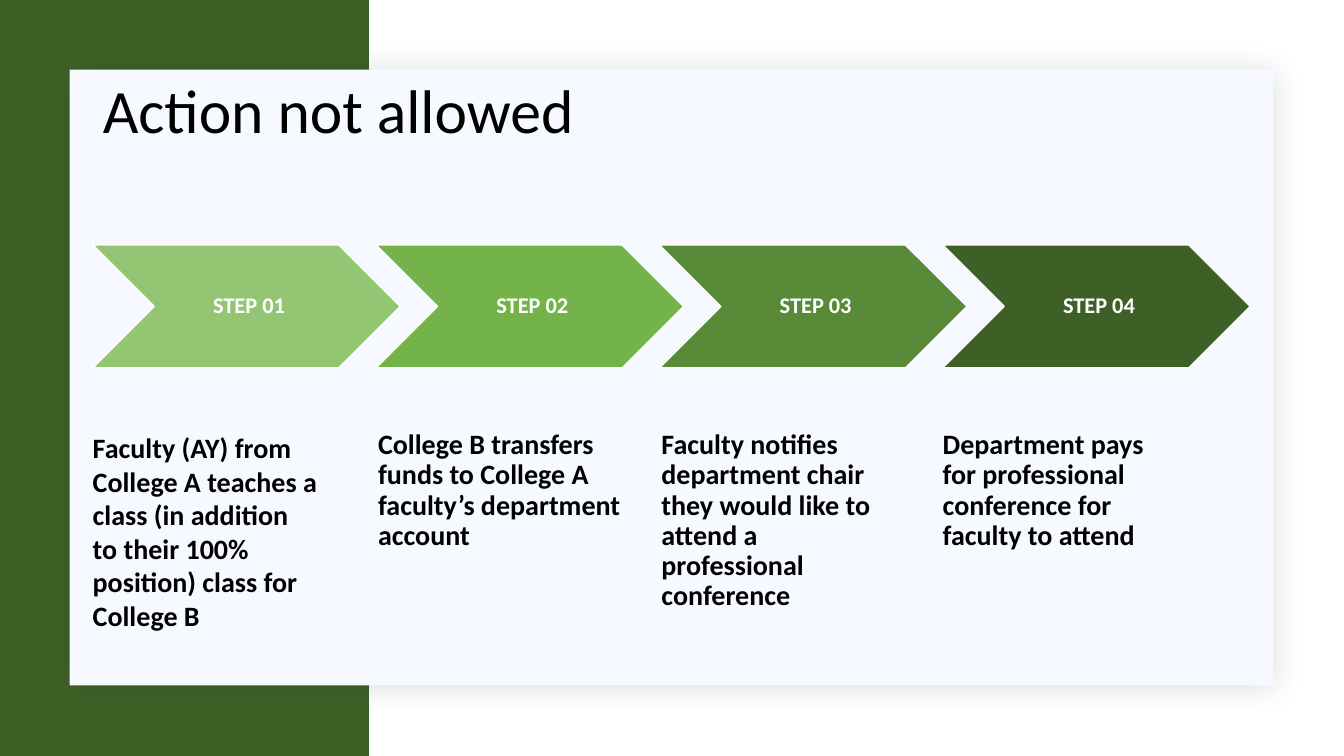
from pptx import Presentation
from pptx.dml.color import RGBColor
from pptx.enum import shapes, text
from pptx.oxml import parse_xml
from pptx.oxml.ns import nsdecls
from pptx.util import Inches, Pt

FONT = "Calibri"
HEADING = "Action not allowed"
STEPS = [
    {"label": "STEP 01", "color": "93C573", "right": 0.2, "spacing": 1.0, "indent": 0,
     "detail": "Faculty (AY) from College A teaches a class (in addition to their 100% position) class for College B"},
    {"label": "STEP 02", "color": "73B34A", "right": 0, "spacing": 0.9, "indent": 0.02,
     "detail": "College B transfers funds to College A faculty’s department account"},
    {"label": "STEP 03", "color": "598A38", "right": 0.2, "spacing": 0.9, "indent": 0.02,
     "detail": "Faculty notifies department chair they would like to attend a professional conference"},
    {"label": "STEP 04", "color": "3E6027", "right": 0.2, "spacing": 0.9, "indent": 0,
     "detail": "Department pays for professional conference for faculty to attend"},
]
LEFT, PITCH = 0.92, 2.81
ARROW_TOP, ARROW_WIDTH, ARROW_HEIGHT = 2.43, 3.05, 1.22
DETAIL_TOP, DETAIL_WIDTH, DETAIL_HEIGHT = 3.8, 2.44, 2.52


def rgb(value):
    return RGBColor.from_string(value)


def add_filled(slide, kind, box, color):
    shape = slide.shapes.add_shape(kind, *map(Inches, box))
    shape.shadow.inherit = False
    shape.fill.solid()
    shape.fill.fore_color.rgb = rgb(color)
    shape.line.fill.background()
    return shape


def set_margins(frame, left, top, right, bottom):
    frame.margin_left, frame.margin_top = Inches(left), Inches(top)
    frame.margin_right, frame.margin_bottom = Inches(right), Inches(bottom)


def write(frame, content, size, color, bold, align, spacing):
    frame.word_wrap = True
    frame.text = content
    paragraph = frame.paragraphs[0]
    paragraph.alignment = align
    paragraph.line_spacing = spacing
    paragraph.font.name = FONT
    paragraph.font.size = Pt(size)
    paragraph.font.bold = bold
    paragraph.font.color.rgb = rgb(color)
    return paragraph


def add_backdrop(slide):
    rectangle = shapes.MSO_SHAPE.RECTANGLE
    add_filled(slide, rectangle, (0, 0, 3.66, 7.5), "3E6027")
    card = add_filled(slide, rectangle, (0.69, 0.69, 11.94, 6.11), "F6F9FF")
    effects = card._element.spPr.find("{*}effectLst")
    effects.append(parse_xml(
        f'<a:outerShdw {nsdecls("a")} blurRad="{Pt(20)}" dist="{Pt(2)}" dir="2700000">'
        '<a:srgbClr val="1F2125"><a:alpha val="15000"/></a:srgbClr></a:outerShdw>'))


def add_heading(slide):
    heading = slide.shapes.title
    slide.shapes._spTree.append(heading._element)
    heading.left, heading.top = Inches(LEFT), Inches(0.4)
    heading.width, heading.height = Inches(11.5), Inches(1.45)
    heading.text_frame.vertical_anchor = text.MSO_ANCHOR.MIDDLE
    write(heading.text_frame, HEADING, 44, "000000", False, text.PP_ALIGN.LEFT, 0.9)


def add_step(slide, left, step):
    arrow = add_filled(slide, shapes.MSO_SHAPE.CHEVRON,
                       (left, ARROW_TOP, ARROW_WIDTH, ARROW_HEIGHT), step["color"])
    arrow.line.color.rgb = rgb("FFFFFF")
    arrow.line.width = Pt(1)
    set_margins(arrow.text_frame, 0.07, 0.02, 0.02, 0.02)
    arrow.text_frame.vertical_anchor = text.MSO_ANCHOR.MIDDLE
    write(arrow.text_frame, step["label"], 16, "FFFFFF", True, text.PP_ALIGN.CENTER, 0.9)

    detail = slide.shapes.add_textbox(*map(Inches, (left, DETAIL_TOP, DETAIL_WIDTH, DETAIL_HEIGHT)))
    set_margins(detail.text_frame, step["indent"], 0.47, step["right"], 0)
    write(detail.text_frame, step["detail"], 20, "000000", True,
          text.PP_ALIGN.LEFT, step["spacing"])


def main():
    deck = Presentation()
    deck.slide_width, deck.slide_height = Inches(13.33), Inches(7.5)
    slide = deck.slides.add_slide(deck.slide_layouts.get_by_name("Title Only"))
    add_backdrop(slide)
    add_heading(slide)
    for index, step in enumerate(STEPS):
        add_step(slide, LEFT + index * PITCH, step)
    deck.save("out.pptx")


if __name__ == "__main__":
    main()
